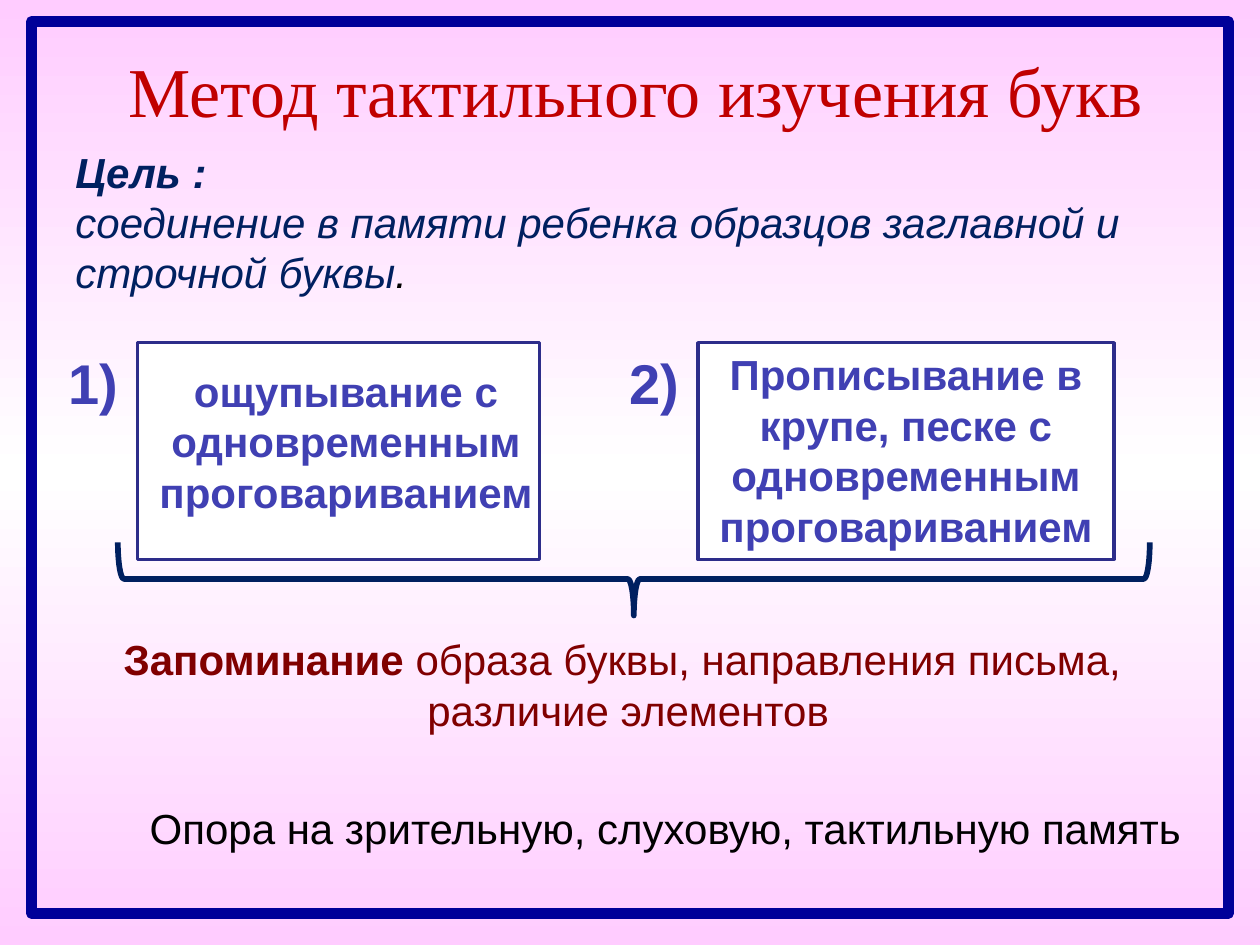
from copy import deepcopy
from pptx import Presentation
from pptx.dml.color import RGBColor
from pptx.enum.shapes import MSO_SHAPE
from pptx.enum.text import MSO_ANCHOR, MSO_AUTO_SIZE, PP_ALIGN
from pptx.oxml.ns import qn
from pptx.util import Inches, Pt

PURPLE = [(0, "00005B"), (0.78, "4040B3"), (1, "EFEFF7")]
PINK = [(0, "FFCCFF"), (0.5, "FFFFFF"), (1, "FFCCFF")]
NAVY, MAROON = "002060", "800000"


def paint(fill, color, element):
    """Fill with a hex colour, or with a top-down gradient of three stops held in element."""
    if isinstance(color, str):
        fill.solid()
        fill.fore_color.rgb = RGBColor.from_string(color)
        return
    fill.gradient()
    fill.gradient_angle = 270
    stops = element.find(".//" + qn("a:gsLst"))
    stops.append(deepcopy(stops[-1]))
    for stop, (position, value) in zip(fill.gradient_stops, color):
        stop.position = position
        stop.color.rgb = RGBColor.from_string(value)


def write(tf, paragraphs, align=PP_ALIGN.LEFT, wrap=True):
    """Fill a text frame; each paragraph is a list of (text, font values, colour)."""
    tf.word_wrap = wrap
    tf.auto_size = MSO_AUTO_SIZE.NONE
    tf.vertical_anchor = MSO_ANCHOR.TOP
    for i, runs in enumerate(paragraphs):
        p = tf.paragraphs[0] if i == 0 else tf.add_paragraph()
        p.alignment = align
        for text, values, color in runs:
            for j, line in enumerate(text.split("\n")):
                if j:
                    p.add_line_break()
                r = p.add_run()
                r.text = line
                for name, value in {"name": "Arial", "size": Pt(24), **values}.items():
                    setattr(r.font, name, value)
                paint(r.font.fill, color, r._r)


prs = Presentation()
prs.slide_width, prs.slide_height = Inches(10), Inches(7.5)
s = prs.slides.add_slide(prs.slide_layouts[5])
paint(s.background.fill, PINK, s.element)

# Title
title = s.shapes.title
title.left, title.top = Inches(0.92), Inches(0.33)
title.width, title.height = Inches(8.34), Inches(0.77)
write(title.text_frame,
      [[("Метод тактильного изучения букв",
         {"name": "Times New Roman", "size": Pt(40)}, "C00000")]], wrap=False)

# Frame, two step boxes and the brace below them
outlines = [
    (MSO_SHAPE.RECTANGLE, (0.25, 0.17, 9.5, 7.08), None, "000099", 6),
    (MSO_SHAPE.RECTANGLE, (1.09, 2.72, 3.19, 1.72), "FFFFFF", "2D2D8A", 2),
    (MSO_SHAPE.RECTANGLE, (5.54, 2.72, 3.3, 1.72), "FFFFFF", "2D2D8A", 2),
    (MSO_SHAPE.RIGHT_BRACE, (4.74, 0.5, 0.58, 8.19), None, NAVY, 3.25),
]
shapes = []
for kind, box, fill, line, weight in outlines:
    sp = s.shapes.add_shape(kind, *map(Inches, box))
    sp.shadow.inherit = False
    if fill:
        paint(sp.fill, fill, sp._element)
    else:
        sp.fill.background()
    sp.line.color.rgb = RGBColor.from_string(line)
    sp.line.width = Pt(weight)
    shapes.append(sp)
frame, touch_box, trace_box, brace = shapes
brace.rotation = 90

bold = {"bold": True}
tf = touch_box.text_frame
tf.margin_left, tf.margin_right, tf.margin_top = Inches(0.16), Inches(0.04), Inches(0.18)
write(tf, [[("ощупывание с одновременным проговариванием", bold, PURPLE)]], PP_ALIGN.CENTER)
write(trace_box.text_frame,
      [[("Прописывание в крупе, песке с одновременным проговариванием", bold, PURPLE)]],
      PP_ALIGN.CENTER)

# Free text: box, paragraphs, alignment, wrap
number = {"bold": True, "size": Pt(32)}
italic = {"italic": True}
texts = [
    ((0.5, 1.11, 9.25, 1.31),
     [[("Цель :", {**bold, **italic}, NAVY)],
      [("соединение в памяти ребенка образцов заглавной и строчной буквы", italic, NAVY),
       (".", italic, "000000")]], PP_ALIGN.LEFT, True),
    ((0.44, 2.72, 0.6, 0.64), [[("1)", number, PURPLE)]], PP_ALIGN.CENTER, False),
    ((4.89, 2.72, 0.6, 0.64), [[("2)", number, PURPLE)]], PP_ALIGN.CENTER, False),
    ((0.84, 4.98, 8.29, 0.91),
     [[("Запоминание ", bold, MAROON),
       ("образа буквы, направления письма, \nразличие элементов", {}, MAROON)]],
     PP_ALIGN.CENTER, False),
    ((1.09, 6.32, 8.47, 0.51),
     [[("Опора на зрительную, слуховую, тактильную память", {}, "000000")]],
     PP_ALIGN.LEFT, False),
]
for box, paragraphs, align, wrap in texts:
    write(s.shapes.add_textbox(*map(Inches, box)).text_frame, paragraphs, align, wrap)

prs.save("out.pptx")
